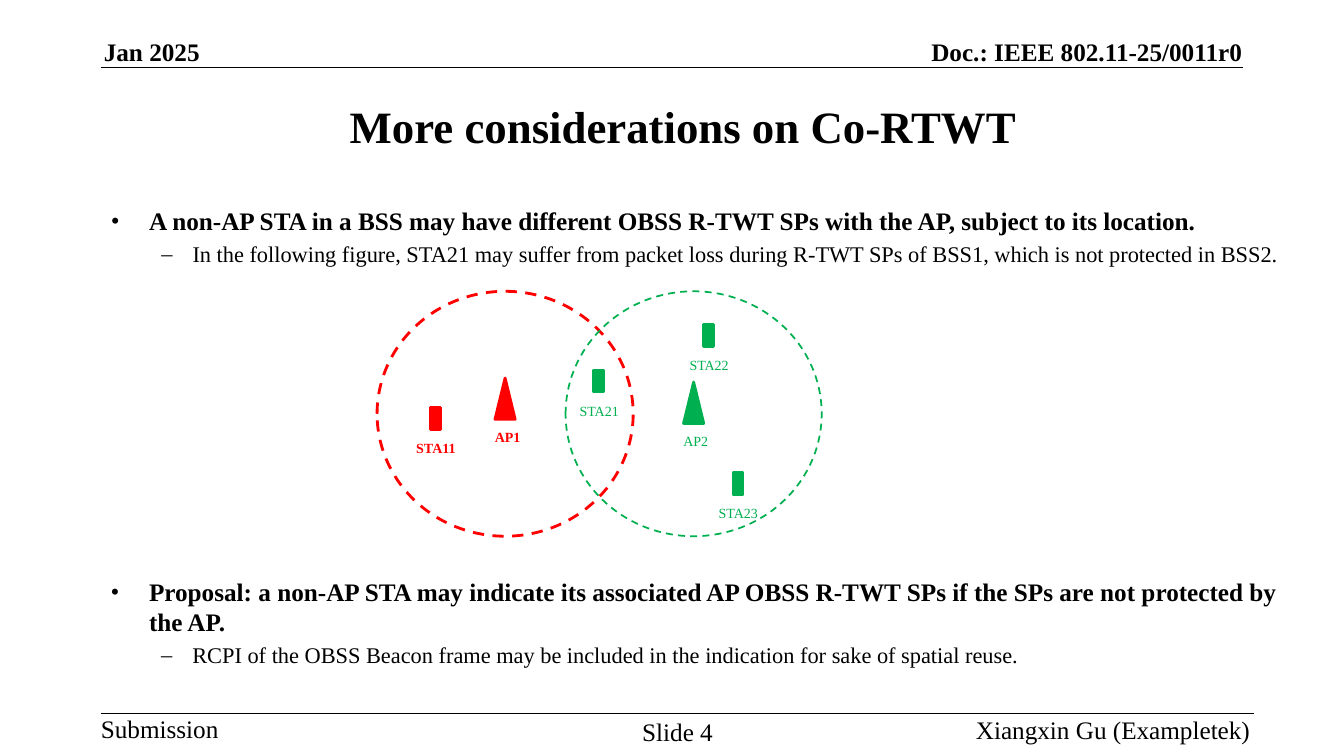
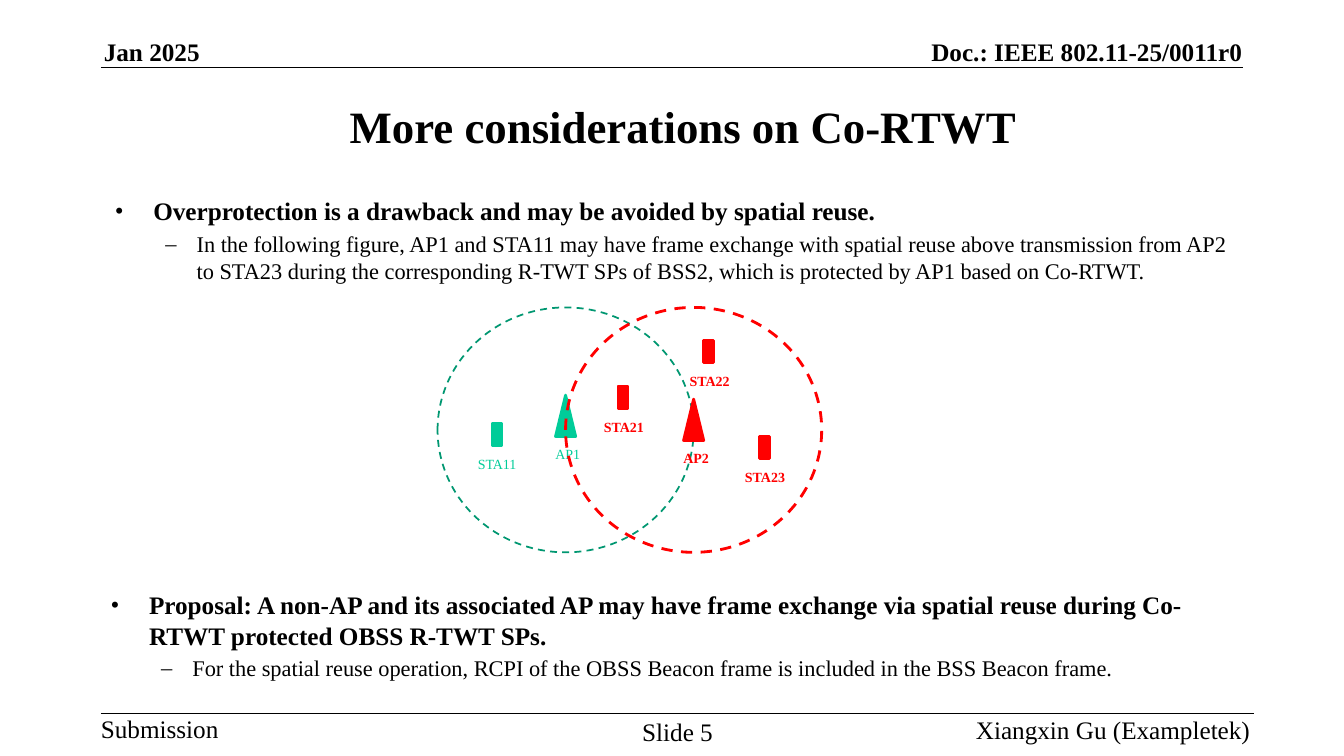
from dataclasses import dataclass

from lxml import etree
from pptx import Presentation
from pptx.dml.color import RGBColor
from pptx.enum.dml import MSO_LINE_DASH_STYLE as Dash
from pptx.enum.shapes import MSO_CONNECTOR, MSO_SHAPE as Preset
from pptx.enum.text import MSO_ANCHOR as Anchor, MSO_AUTO_SIZE as AutoSize, PP_ALIGN as Align
from pptx.oxml.ns import qn
from pptx.util import Inches, Pt


@dataclass(frozen=True)
class Theme:
    font: str = "Times New Roman"
    ink: str = "000000"
    red: str = "FF0000"
    green: str = "00B050"
    teal: str = "00CC99"
    dark_teal: str = "009771"
    title_size: int = 32
    point_size: int = 18
    detail_size: int = 16
    frame_size: int = 18
    label_size: int = 10


@dataclass(frozen=True)
class Cell:
    """One access point, its coverage circle and its stations."""
    left: float
    access_point: tuple  # name, distance below the top of the circle
    stations: tuple      # name, x and y inside the circle
    color: str
    outline: str
    strong: bool = False


THEME = Theme()
CELL_WIDTH, CELL_HEIGHT = 2.54, 2.43
MAST_WIDTH, MAST_HEIGHT = 0.2, 0.41
STATION_WIDTH, STATION_HEIGHT = 0.1, 0.22
# Bullet, left margin, hanging indent, size and weight of each list level
LEVELS = (
    ("•", 0.38, -0.38, THEME.point_size, True),
    ("–", 0.81, -0.31, THEME.detail_size, False),
)


def place(shape, box):
    shape.left, shape.top, shape.width, shape.height = map(Inches, box)


def format_runs(paragraph, size, color=THEME.ink, bold=False):
    for run in paragraph.runs:
        font = run.font
        font.name, font.size, font.bold = THEME.font, Pt(size), bold
        font.color.rgb = RGBColor.from_string(color)


def add_label(slide, box, text, size, color=THEME.ink, bold=False,
              align=Align.LEFT, anchor=Anchor.TOP, margin=True, indent=0):
    """Add one unwrapped line of text."""
    frame = slide.shapes.add_textbox(*map(Inches, box)).text_frame
    frame.text = text
    frame.word_wrap = False
    frame.auto_size = AutoSize.SHAPE_TO_FIT_TEXT
    frame.vertical_anchor = anchor
    if not margin:
        frame.margin_left = frame.margin_right = 0
        frame.margin_top = frame.margin_bottom = 0
    paragraph = frame.paragraphs[0]
    paragraph.alignment = align
    if indent:
        paragraph._p.get_or_add_pPr().set("marL", str(Inches(indent)))
    format_runs(paragraph, size, color, bold)


def add_rule(slide, left, right, top):
    rule = slide.shapes.add_connector(
        MSO_CONNECTOR.STRAIGHT, Inches(left), Inches(top), Inches(right), Inches(top))
    rule.line.color.rgb = RGBColor.from_string(THEME.ink)
    rule.line.width = Pt(1)
    etree.SubElement(rule._element.spPr, qn("a:effectLst"))


def add_preset(slide, preset, box, color, width=2, filled=True):
    shape = slide.shapes.add_shape(preset, *map(Inches, box))
    shape.shadow.inherit = False
    if filled:
        shape.fill.solid()
        shape.fill.fore_color.rgb = RGBColor.from_string(color)
    else:
        shape.fill.background()
        shape.line.dash_style = Dash.DASH
    shape.line.color.rgb = RGBColor.from_string(color)
    shape.line.width = Pt(width)


def add_frame(slide, number):
    """Header and footer lines with their texts."""
    size = THEME.frame_size
    add_label(slide, (0.53, 0.36, 1.47, 0.3), "Jan 2025", size, bold=True,
              anchor=Anchor.BOTTOM, margin=False, indent=0.5)
    add_label(slide, (8.7, 0.36, 3.62, 0.3), "Doc.: IEEE 802.11-25/0011r0", size, bold=True,
              align=Align.RIGHT, anchor=Anchor.BOTTOM, margin=False)
    add_rule(slide, 1, 12.33, 0.67)
    add_rule(slide, 1, 12.44, 7.08)
    add_label(slide, (1, 7.08, 1.18, 0.3), "Submission", size, margin=False)
    add_label(slide, (6.28, 7.11, 0.88, 0.3), f"Slide {number}", size,
              align=Align.CENTER, margin=False)
    add_label(slide, (9.2, 7.09, 3.2, 0.3), "Xiangxin Gu (Exampletek)", size,
              align=Align.RIGHT, margin=False)


def fill_title(slide, text):
    title = slide.shapes.title
    place(title, (1, 0.75, 11.55, 1))
    frame = title.text_frame
    frame.text = text
    frame.auto_size = AutoSize.NONE
    frame.vertical_anchor = Anchor.MIDDLE
    frame.paragraphs[0].alignment = Align.CENTER
    format_runs(frame.paragraphs[0], THEME.title_size, bold=True)


def fill_list(shape, box, lines):
    """A bold point followed by its detail, one list level each."""
    place(shape, box)
    frame = shape.text_frame
    frame.text = "\n".join(lines)
    frame.word_wrap = True
    frame.auto_size = AutoSize.NONE
    frame.vertical_anchor = Anchor.TOP
    for level, paragraph in enumerate(frame.paragraphs):
        bullet, margin, indent, size, bold = LEVELS[level]
        paragraph.level = level
        paragraph.alignment = Align.LEFT
        paragraph.space_before = Pt(0.2 * size if level else 0)
        properties = paragraph._p.get_or_add_pPr()
        properties.set("marL", str(Inches(margin)))
        properties.set("indent", str(Inches(indent)))
        etree.SubElement(properties, qn("a:buFont")).set("typeface", THEME.font)
        etree.SubElement(properties, qn("a:buChar")).set("char", bullet)
        format_runs(paragraph, size, bold=bold)


def add_cell(slide, cell, top):
    # Access point in the middle of its circle
    name, drop = cell.access_point
    mast_left = cell.left + (CELL_WIDTH - MAST_WIDTH) / 2
    mast_top = top + drop
    add_preset(slide, Preset.ISOSCELES_TRIANGLE,
               (mast_left, mast_top, MAST_WIDTH, MAST_HEIGHT), cell.color)
    add_preset(slide, Preset.OVAL, (cell.left, top, CELL_WIDTH, CELL_HEIGHT),
               cell.outline, 2 if cell.strong else 1.25, filled=False)
    add_label(slide, (mast_left - 0.1, mast_top + 0.45, 0.46, 0.27), name,
              THEME.label_size, cell.color, cell.strong)
    # Stations with their names below
    for name, x, y in cell.stations:
        left, station_top = cell.left + x, top + y
        add_preset(slide, Preset.RECTANGLE,
                   (left, station_top, STATION_WIDTH, STATION_HEIGHT), cell.color)
        add_label(slide, (left - 0.24, station_top + 0.27, 0.61, 0.27), name,
                  THEME.label_size, cell.color, cell.strong)


def build_slide(presentation, number, observation, proposal, cells, cells_top):
    slide = presentation.slides.add_slide(presentation.slide_layouts[1])
    add_frame(slide, number)
    fill_title(slide, "More considerations on Co-RTWT")
    fill_list(slide.placeholders[1], *observation)
    for cell in cells:
        add_cell(slide, cell, cells_top)
    fill_list(slide.shapes.add_textbox(0, 0, 0, 0), *proposal)


def main():
    presentation = Presentation()
    presentation.slide_width, presentation.slide_height = Inches(13.33), Inches(7.5)

    # A station that hears the neighbouring cell
    build_slide(
        presentation, 4,
        ((1, 1.99, 11.96, 0.85), (
            "A non-AP STA in a BSS may have different OBSS R-TWT SPs with the AP, "
            "subject to its location.",
            "In the following figure, STA21 may suffer from packet loss during R-TWT SPs "
            "of BSS1, which is not protected in BSS2.")),
        ((1, 5.67, 11.96, 1.2), (
            "Proposal: a non-AP STA may indicate its associated AP OBSS R-TWT SPs "
            "if the SPs are not protected by the AP.",
            "RCPI of the OBSS Beacon frame may be included in the indication "
            "for sake of spatial reuse.")),
        (Cell(3.74, ("AP1", 0.86), (("STA11", 0.53, 1.15),),
              THEME.red, THEME.red, strong=True),
         Cell(5.61, ("AP2", 0.9),
              (("STA21", 0.28, 0.78), ("STA22", 1.37, 0.33), ("STA23", 1.66, 1.8)),
              THEME.green, THEME.green)),
        2.89)

    # Spatial reuse between closer cells
    build_slide(
        presentation, 5,
        ((1.04, 1.89, 11.33, 1.01), (
            "Overprotection is a drawback and may be avoided by spatial reuse.",
            "In the following figure, AP1 and STA11 may have frame exchange with spatial "
            "reuse above transmission from AP2 to STA23 during the corresponding R-TWT SPs "
            "of BSS2, which is protected by AP1 based on Co-RTWT.")),
        ((1, 5.8, 11.33, 1.06), (
            "Proposal: A non-AP and its associated AP may have frame exchange via spatial "
            "reuse during Co-RTWT protected OBSS R-TWT SPs.",
            "For the spatial reuse operation, RCPI of the OBSS Beacon frame is included "
            "in the BSS Beacon frame.")),
        (Cell(4.34, ("AP1", 0.87), (("STA11", 0.54, 1.15),),
              THEME.teal, THEME.dark_teal),
         Cell(5.61, ("AP2", 0.91),
              (("STA21", 0.52, 0.78), ("STA22", 1.37, 0.33), ("STA23", 1.92, 1.28)),
              THEME.red, THEME.red, strong=True)),
        3.05)

    presentation.save("out.pptx")


if __name__ == "__main__":
    main()
